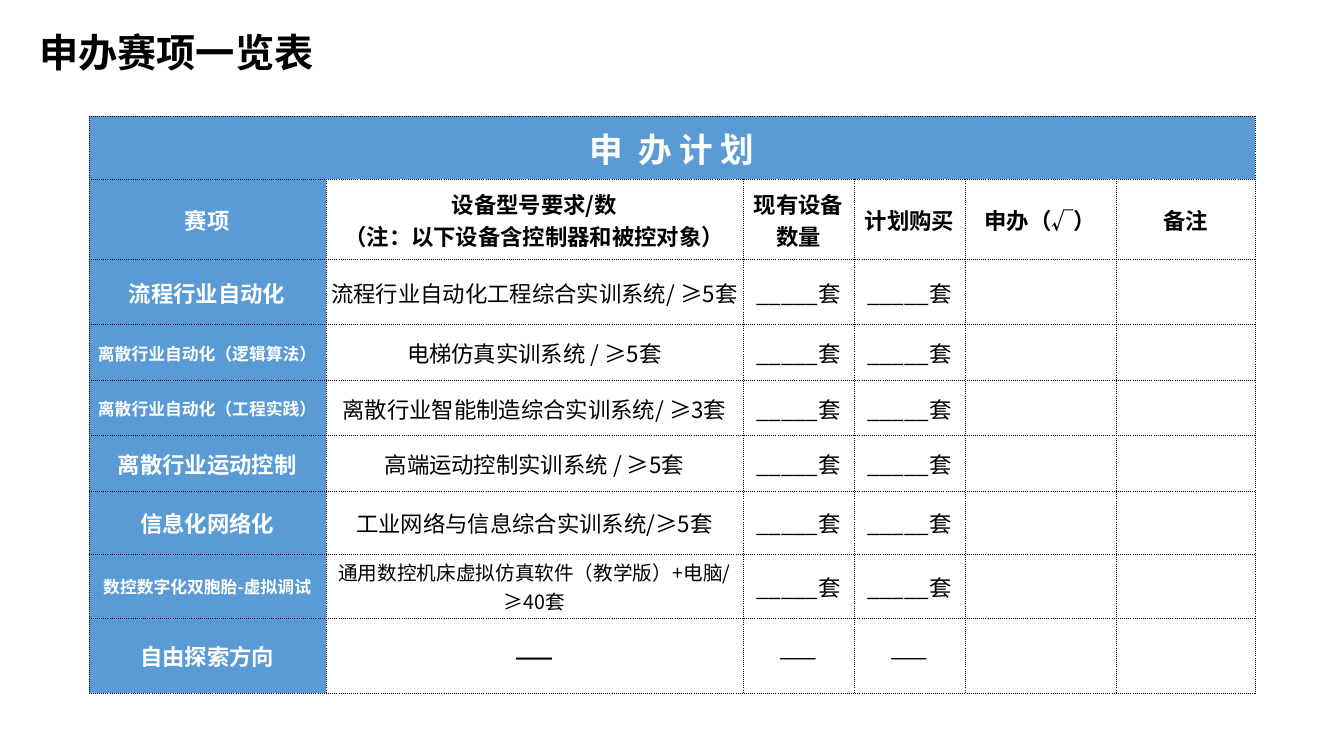
from lxml.etree import SubElement
from pptx import Presentation
from pptx.dml.color import RGBColor
from pptx.enum.text import MSO_ANCHOR as Anchor, PP_ALIGN as Align
from pptx.oxml.ns import qn
from pptx.util import Inches, Pt

FONT = "Noto Sans CJK SC"
BLUE, WHITE, BLACK = "5B9BD5", "FFFFFF", "000000"
TITLE = "申办赛项一览表"
BANNER = ("申 ", "办 计 划")
HEADINGS = ["赛项", "设备型号要求/数\n（注：以下设备含控制器和被控对象）",
            "现有设备 数量", "计划购买", "申办（√）", "备注"]
SETS, DASH = "_____套", "——"
EVENTS = [
    ("流程行业自动化", 16, "流程行业自动化工程综合实训系统/ ≥5套", 16, SETS),
    ("离散行业自动化（逻辑算法）", 12, "电梯仿真实训系统 / ≥5套", 16, SETS),
    ("离散行业自动化（工程实践）", 12, "离散行业智能制造综合实训系统/ ≥3套", 16, SETS),
    ("离散行业运动控制", 16, "高端运动控制实训系统 / ≥5套", 16, SETS),
    ("信息化网络化", 16, "工业网络与信息综合实训系统/≥5套", 16, SETS),
    ("数控数字化双胞胎-虚拟调试", 12, "通用数控机床虚拟仿真软件（教学版）+电脑/≥40套", 14, SETS),
    ("自由探索方向", 16, DASH, 16, DASH),
]
COLUMN_WIDTHS = [2.35, 4.14, 1.1, 1.1, 1.5, 1.38]
ROW_HEIGHTS = [0.63, 0.79, 0.63, 0.55, 0.55, 0.55, 0.63, 0.63, 0.75]


def rgb(color):
    return RGBColor.from_string(color)


def style(paragraph, size, color, bold, align):
    paragraph.alignment = align
    paragraph.space_before = Pt(0)
    font = paragraph.font
    font.name, font.size, font.bold = FONT, Pt(size), bold
    font.color.rgb = rgb(color)
    defaults = paragraph._p.get_or_add_pPr().get_or_add_defRPr()
    SubElement(defaults, qn("a:ea"), typeface=FONT)


def format_cell(cell, fill):
    properties = cell._tc.get_or_add_tcPr()
    for side in ("lnL", "lnR", "lnT", "lnB"):
        border = SubElement(properties, qn(f"a:{side}"), w=str(Pt(0.25)))
        solid = SubElement(border, qn("a:solidFill"))
        SubElement(solid, qn("a:srgbClr"), val=BLACK)
        SubElement(border, qn("a:prstDash"), val="sysDot")
    cell.fill.solid()
    cell.fill.fore_color.rgb = rgb(fill)
    cell.vertical_anchor = Anchor.MIDDLE


def write_cell(cell, text, size, color, bold):
    cell.margin_left = cell.margin_right = cell.margin_top = Inches(0.01)
    cell.margin_bottom = 0
    frame = cell.text_frame
    frame.text = text
    for paragraph in frame.paragraphs:
        style(paragraph, size, color, bold, Align.CENTER)


def add_title(slide):
    title = slide.shapes.title
    title.left, title.top = Inches(0.34), Inches(0.23)
    title.width, title.height = Inches(9.45), Inches(0.74)
    frame = title.text_frame
    frame.margin_left = frame.margin_right = Inches(0.05)
    frame.margin_top = frame.margin_bottom = Inches(0.05)
    frame.vertical_anchor = Anchor.TOP
    frame.text = TITLE
    style(frame.paragraphs[0], 28, BLACK, True, Align.LEFT)


def add_plan(slide):
    plan = slide.shapes.add_table(
        len(ROW_HEIGHTS), len(COLUMN_WIDTHS), Inches(0.88), Inches(1.15),
        Inches(sum(COLUMN_WIDTHS)), Inches(sum(ROW_HEIGHTS))).table
    plan.first_row = plan.horz_banding = False
    for column, width in zip(plan.columns, COLUMN_WIDTHS):
        column.width = Inches(width)
    for r, height in enumerate(ROW_HEIGHTS):
        plan.rows[r].height = Inches(height)
        for c in range(len(COLUMN_WIDTHS)):
            format_cell(plan.cell(r, c), BLUE if r == 0 or c == 0 else WHITE)

    banner = plan.cell(0, 0)
    banner.merge(plan.cell(0, len(COLUMN_WIDTHS) - 1))
    heading = banner.text_frame.paragraphs[0]
    for part in BANNER:
        heading.add_run().text = part
    heading.runs[0].font._element.set("spc", "250")
    style(heading, 24, WHITE, True, Align.CENTER)

    for c, text in enumerate(HEADINGS):
        write_cell(plan.cell(1, c), text, 16, BLACK if c else WHITE, True)
    for r, (event, event_size, equipment, equipment_size, count) in enumerate(EVENTS, 2):
        write_cell(plan.cell(r, 0), event, event_size, WHITE, True)
        write_cell(plan.cell(r, 1), equipment, equipment_size, BLACK, equipment == DASH)
        for c in (2, 3):
            write_cell(plan.cell(r, c), count, 16, BLACK, False)


def main():
    deck = Presentation()
    deck.slide_width, deck.slide_height = Inches(13.33), Inches(7.5)
    slide = deck.slides.add_slide(deck.slide_layouts[5])
    add_title(slide)
    add_plan(slide)
    deck.save("out.pptx")


if __name__ == "__main__":
    main()
